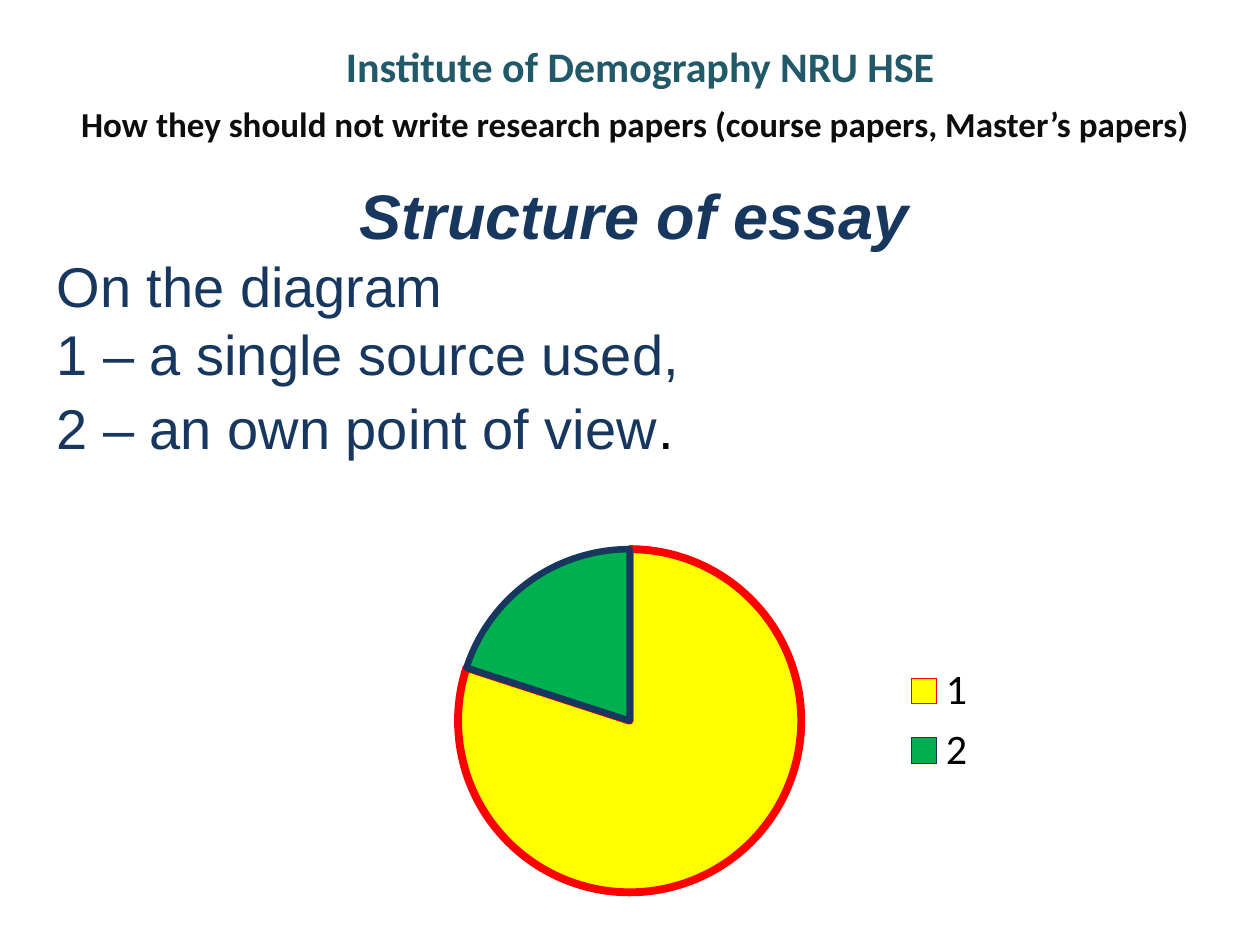
from pptx import Presentation
from pptx.chart.data import CategoryChartData
from pptx.dml.color import RGBColor
from pptx.enum.chart import XL_CHART_TYPE, XL_LEGEND_POSITION
from pptx.enum.text import MSO_ANCHOR, MSO_AUTO_SIZE, PP_ALIGN
from pptx.util import Cm, Pt

PIE = XL_CHART_TYPE.PIE
RIGHT = XL_LEGEND_POSITION.RIGHT
TOP, MIDDLE = MSO_ANCHOR.TOP, MSO_ANCHOR.MIDDLE
LEFT, CENTER = PP_ALIGN.LEFT, PP_ALIGN.CENTER
NAVY = "17375E"

# Content
HEAD = "Institute of Demography NRU HSE"
TOPIC = "How they should not write research papers (course papers, Master’s papers)"
ESSAY = "Structure of essay"
NOTES = ["On the diagram", "1 – a single source used,", "2 – an own point of view"]
# category, value, fill, line colour, line width
SLICES = [("1", 80, "FFFF00", "FF0000", 4.5),
          ("2", 20, "00B050", NAVY, 3.75)]


def rgb(code):
    return RGBColor.from_string(code)


def style(font, name, size, color, bold=False, italic=False):
    font.name, font.size = name, Pt(size)
    font.bold, font.italic = bold, italic
    font.color.rgb = rgb(color)


def place(shape, box, anchor):
    shape.left, shape.top, shape.width, shape.height = map(Cm, box)
    frame = shape.text_frame
    frame.word_wrap = True
    frame.auto_size = MSO_AUTO_SIZE.NONE
    frame.vertical_anchor = anchor
    return frame


def write(para, text, align, *look):
    para.text = text
    para.alignment = align
    style(para.font, *look)


prs = Presentation()
prs.slide_width, prs.slide_height = Cm(25.4), Cm(19.05)
slide = prs.slides.add_slide(prs.slide_layouts[0])
title, sub = slide.placeholders

# Header lines
frame = place(title, (2.11, 0.53, 21.59, 1.6), MIDDLE)
write(frame.paragraphs[0], HEAD, CENTER, "Calibri", 24, "215968", True)
frame = place(sub, (1.3, 1.93, 23.01, 1.4), TOP)
para = frame.paragraphs[0]
write(para, TOPIC, CENTER, "Calibri", 20, "0D0D0D", True)
para.space_before = Pt(4)

# Essay heading and key to the diagram
box = slide.shapes.add_textbox(0, 0, 0, 0)
frame = place(box, (0.89, 3.12, 23.8, 6.6), MIDDLE)
write(frame.paragraphs[0], ESSAY, CENTER, "Arial", 36, NAVY, True, True)
for note in NOTES:
    para = frame.add_paragraph()
    write(para, note, LEFT, "Arial", 32, NAVY)
para.space_before = Pt(4)
dot = para.add_run()
dot.text = "."
dot.font.color.rgb = rgb("000000")

# Pie chart
data = CategoryChartData()
data.categories = [s[0] for s in SLICES]
data.add_series("Series 1", [s[1] for s in SLICES])
chart = slide.shapes.add_chart(
    PIE, Cm(7.29), Cm(10.72), Cm(12.7), Cm(7.62), data).chart
chart.has_title = False
style(chart.font, "Calibri", 10, "000000")
chart.has_legend = True
chart.legend.position = RIGHT
chart.legend.include_in_layout = False
style(chart.legend.font, "Calibri", 24, "000000")
plot = chart.plots[0]
plot.vary_by_categories = True
for i, (_, _, fill, edge, width) in enumerate(SLICES):
    form = plot.series[0].points[i].format
    form.fill.solid()
    form.fill.fore_color.rgb = rgb(fill)
    form.line.color.rgb = rgb(edge)
    form.line.width = Pt(width)

prs.save("out.pptx")
